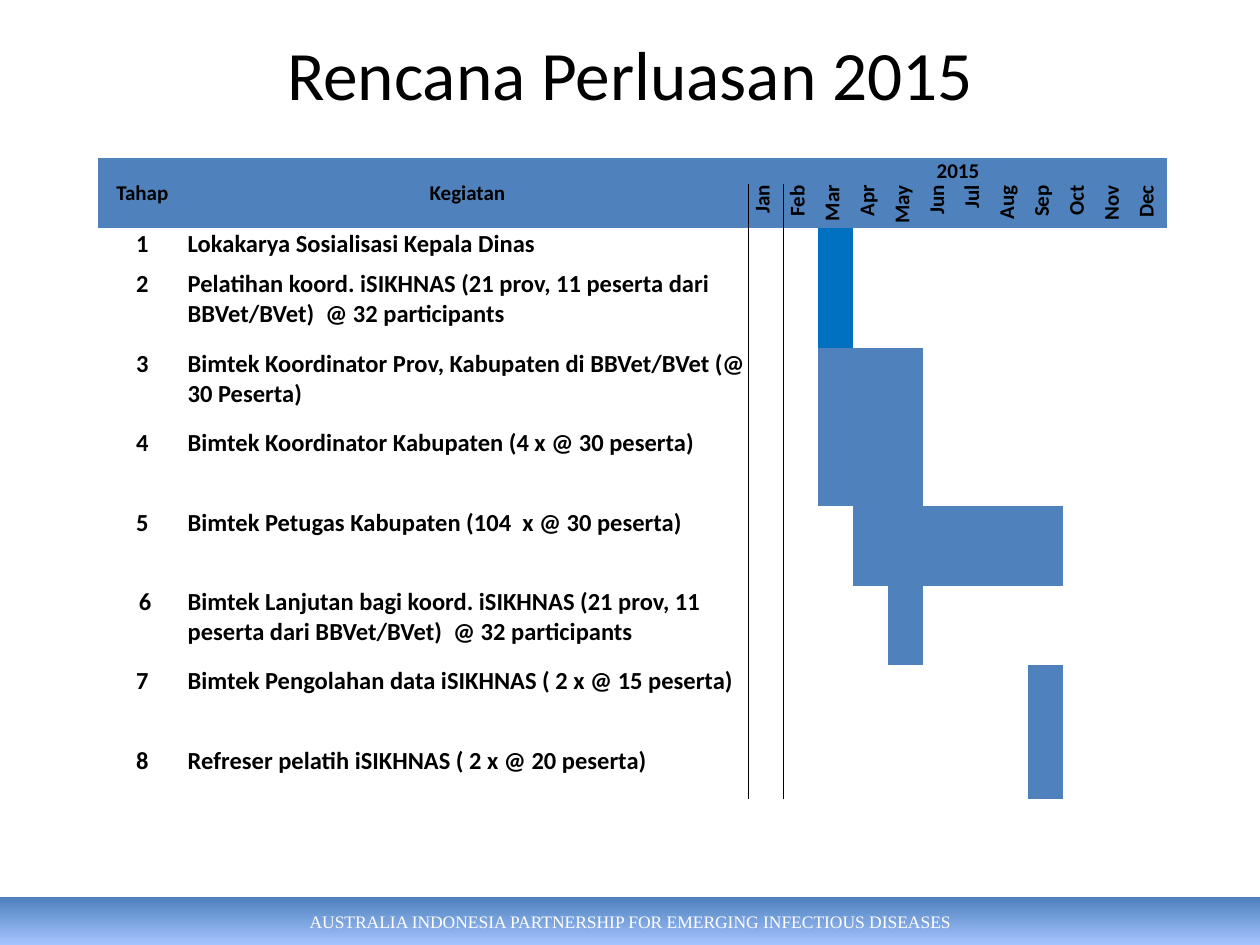
from dataclasses import dataclass

from lxml.etree import SubElement
from pptx import Presentation
from pptx.dml.color import RGBColor
from pptx.enum.shapes import MSO_SHAPE
from pptx.enum.text import MSO_ANCHOR, PP_ALIGN
from pptx.oxml import parse_xml
from pptx.oxml.ns import nsdecls, qn
from pptx.util import Inches, Pt


@dataclass(frozen=True)
class Theme:
    blue: RGBColor = RGBColor(0x4F, 0x81, 0xBD)
    strong_blue: RGBColor = RGBColor(0x00, 0x70, 0xC0)
    pale_blue: RGBColor = RGBColor(0xA4, 0xC4, 0xFF)
    black: RGBColor = RGBColor(0, 0, 0)
    white: RGBColor = RGBColor(255, 255, 255)
    body_font: str = "Calibri"
    footer_font: str = "Times New Roman"
    title_size: float = 39.6
    header_size: float = 12
    body_size: float = 14
    footer_size: float = 10


THEME = Theme()


@dataclass(frozen=True)
class Activity:
    stage: str
    name: str
    first_month: str
    last_month: str
    height: float = 0.63
    color: RGBColor = THEME.blue


MONTHS = ["Jan", "Feb", "Mar", "Apr", "May", "Jun",
          "Jul", "Aug", "Sep", "Oct", "Nov", "Dec"]
ACTIVITIES = [
    Activity("1", "Lokakarya Sosialisasi Kepala Dinas",
             "Mar", "Mar", 0.32, THEME.strong_blue),
    Activity("2", "Pelatihan koord. iSIKHNAS (21 prov, 11 peserta dari BBVet/BVet)  @ 32 participants",
             "Mar", "Mar", color=THEME.strong_blue),
    Activity("3", "Bimtek Koordinator Prov, Kabupaten di BBVet/BVet (@ 30 Peserta)", "Mar", "May"),
    Activity("4", "Bimtek Koordinator Kabupaten (4 x @ 30 peserta)", "Mar", "May"),
    Activity("5", "Bimtek Petugas Kabupaten (104  x @ 30 peserta)", "Apr", "Sep"),
    Activity(" 6", "Bimtek Lanjutan bagi koord. iSIKHNAS (21 prov, 11 peserta dari BBVet/BVet)  @ 32 participants",
             "May", "May"),
    Activity("7", "Bimtek Pengolahan data iSIKHNAS ( 2 x @ 15 peserta)", "Sep", "Sep"),
    Activity("8", "Refreser pelatih iSIKHNAS ( 2 x @ 20 peserta)", "Sep", "Sep", 0.43),
]

TABLE_WIDTH, STAGE_WIDTH, NAME_WIDTH = 8.49, 0.7, 4.46
MONTH_WIDTH = (TABLE_WIDTH - STAGE_WIDTH - NAME_WIDTH) / len(MONTHS)
HEADER_HEIGHTS = [0.21, 0.35]
FIRST_MONTH_COLUMN = 2
NO_STYLE = "{2D5ABB26-0587-4C30-8999-92F81FD0307C}"


def write(frame, text: str, size: float, color: RGBColor = THEME.black,
          font: str = THEME.body_font, bold: bool = False,
          align: PP_ALIGN = PP_ALIGN.CENTER) -> None:
    frame.text = text
    paragraph = frame.paragraphs[0]
    paragraph.alignment = align
    for run in paragraph.runs:
        run.font.size = Pt(size)
        run.font.name = font
        run.font.bold = bold
        run.font.color.rgb = color


def clear_cell(cell) -> None:
    """Remove fill and insets, and keep the empty line from stretching its row."""
    cell.margin_left = cell.margin_right = cell.margin_top = Inches(0.01)
    cell.margin_bottom = 0
    cell.fill.background()
    paragraph = cell.text_frame.paragraphs[0]
    SubElement(paragraph._p, qn("a:endParaRPr"), sz=str(THEME.header_size * 100))


def paint(cell, color: RGBColor) -> None:
    cell.fill.solid()
    cell.fill.fore_color.rgb = color


def write_header(cell, text: str, anchor: MSO_ANCHOR,
                 align: PP_ALIGN = PP_ALIGN.CENTER) -> None:
    paint(cell, THEME.blue)
    cell.vertical_anchor = anchor
    write(cell.text_frame, text, THEME.header_size, bold=True, align=align)


def add_border(cell, side: str) -> None:
    cell._tc.get_or_add_tcPr().insert(0, parse_xml(
        f'<a:{side} {nsdecls("a")} w="6350"><a:solidFill>'
        f'<a:srgbClr val="{THEME.black}"/></a:solidFill></a:{side}>'))


def add_footer(slide) -> None:
    band = slide.shapes.add_shape(
        MSO_SHAPE.RECTANGLE, 0, Inches(7.12), Inches(10), Inches(0.38))
    band.shadow.inherit = False
    band.line.fill.background()
    band.fill.gradient()
    band.fill.gradient_angle = 270
    for stop, color, position in zip(
            band.fill.gradient_stops, (THEME.blue, THEME.pale_blue), (0, 1)):
        stop.color.rgb = color
        stop.position = position
    band.text_frame.vertical_anchor = MSO_ANCHOR.MIDDLE
    write(band.text_frame, "AUSTRALIA INDONESIA PARTNERSHIP FOR EMERGING INFECTIOUS DISEASES",
          THEME.footer_size, THEME.white, THEME.footer_font)


def add_title(slide) -> None:
    title = slide.shapes.add_textbox(Inches(0.5), Inches(0.3), Inches(9), Inches(0.56))
    title.text_frame.word_wrap = True
    title.text_frame.vertical_anchor = MSO_ANCHOR.MIDDLE
    write(title.text_frame, "Rencana Perluasan 2015", THEME.title_size)


def add_schedule(slide) -> None:
    heights = HEADER_HEIGHTS + [activity.height for activity in ACTIVITIES]
    widths = [STAGE_WIDTH, NAME_WIDTH] + [MONTH_WIDTH] * len(MONTHS)
    schedule = slide.shapes.add_table(
        len(heights), len(widths), Inches(0.78), Inches(1.25),
        Inches(TABLE_WIDTH), Inches(sum(heights))).table
    schedule.first_row = schedule.horz_banding = False
    schedule._tbl.tblPr.find(qn("a:tableStyleId")).text = NO_STYLE
    for row, height in zip(schedule.rows, heights):
        row.height = Inches(height)
    for column, width in zip(schedule.columns, widths):
        column.width = Inches(width)
    for cell in schedule.iter_cells():
        clear_cell(cell)

    # Header rows
    for column, heading in enumerate(["Tahap", "Kegiatan"]):
        schedule.cell(0, column).merge(schedule.cell(1, column))
        write_header(schedule.cell(0, column), heading, MSO_ANCHOR.MIDDLE)
    year = schedule.cell(0, FIRST_MONTH_COLUMN)
    year.merge(schedule.cell(0, len(widths) - 1))
    write_header(year, "2015", MSO_ANCHOR.BOTTOM)
    for column, month in enumerate(MONTHS, FIRST_MONTH_COLUMN):
        cell = schedule.cell(1, column)
        write_header(cell, month, MSO_ANCHOR.BOTTOM, PP_ALIGN.RIGHT)
        cell._tc.get_or_add_tcPr().set("vert", "vert270")
    add_border(schedule.cell(1, FIRST_MONTH_COLUMN), "lnL")

    # Activities and their months
    for row, activity in enumerate(ACTIVITIES, len(HEADER_HEIGHTS)):
        write(schedule.cell(row, 0).text_frame, activity.stage, THEME.body_size, bold=True)
        write(schedule.cell(row, 1).text_frame, activity.name, THEME.body_size,
              bold=True, align=PP_ALIGN.LEFT)
        add_border(schedule.cell(row, 1), "lnR")
        add_border(schedule.cell(row, FIRST_MONTH_COLUMN), "lnL")
        first = MONTHS.index(activity.first_month)
        last = MONTHS.index(activity.last_month)
        for month in range(first, last + 1):
            paint(schedule.cell(row, FIRST_MONTH_COLUMN + month), activity.color)


def main() -> None:
    presentation = Presentation()
    presentation.slide_width = Inches(10)
    presentation.slide_height = Inches(7.5)
    slide = presentation.slides.add_slide(presentation.slide_layouts[6])
    add_footer(slide)
    add_title(slide)
    add_schedule(slide)
    presentation.save("out.pptx")


if __name__ == "__main__":
    main()
